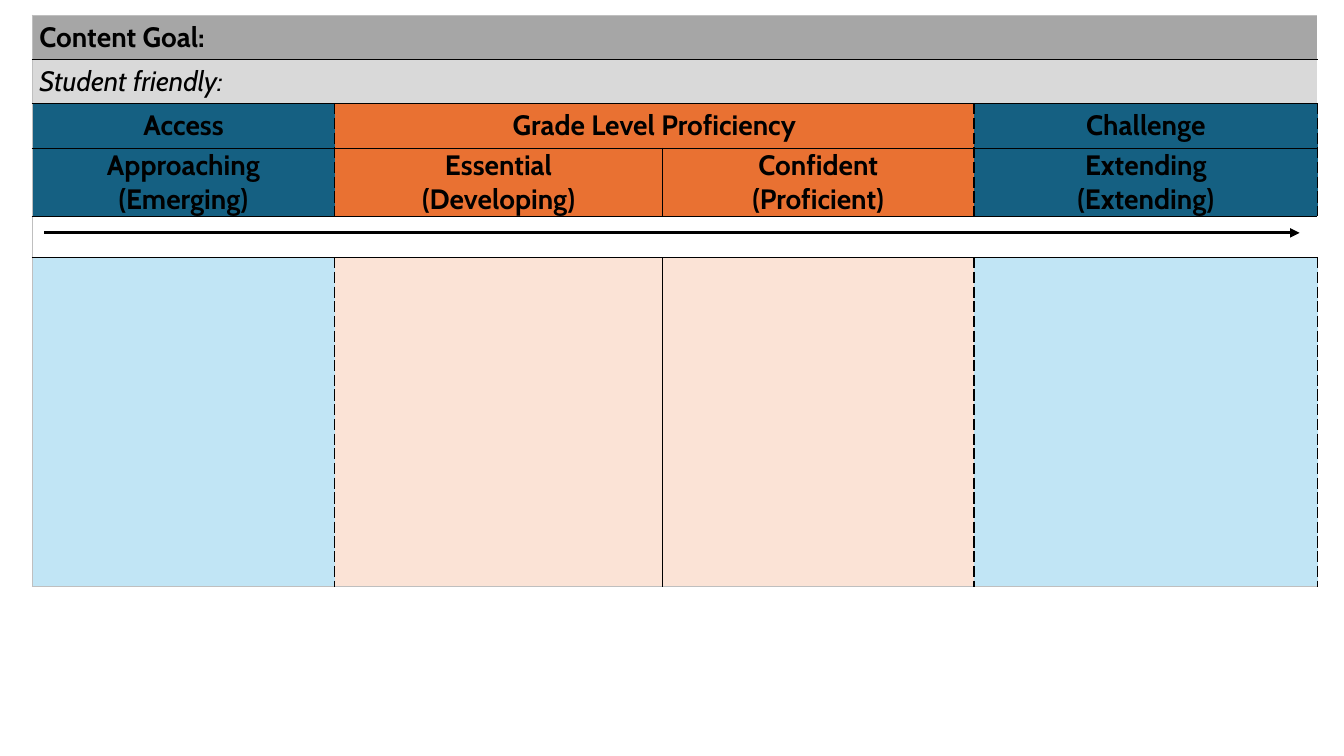
"""Build a content goal planner with four proficiency levels."""
import pptx
import pptx.dml.color
import pptx.enum.shapes
import pptx.enum.text
import pptx.oxml
import pptx.util
from lxml import etree

Inches = pptx.util.Inches
Pt = pptx.util.Pt
Align = pptx.enum.text.PP_ALIGN
NS = 'xmlns:a="http://schemas.openxmlformats.org/drawingml/2006/main"'

GRAY, PALE = "A6A6A6", "D9D9D9"
BLUE, ORANGE = "156082", "E97132"
SKY, PEACH = "C1E5F5", "FBE3D6"
COLS = [3, 3.25, 3.09, 3.41]
ROWS = [0.44, 0.44, 0.44, 0.67, 0.41, 3.26]
EDGES = ["rim", "dash", "solid", "dash", "dash"]
LINES = {"rim": ("BFBFBF", "solid"), "dash": ("000000", "sysDash"),
         "solid": ("000000", "solid")}
CENTER = {"bold": True, "align": Align.CENTER}
CELLS = [
    [("Content Goal:", GRAY, 4, {"bold": True})],
    [("Student friendly:", PALE, 4, {"italic": True})],
    [("Access", BLUE, 1, CENTER),
     ("Grade Level Proficiency", ORANGE, 2, CENTER),
     ("Challenge", BLUE, 1, CENTER)],
    [("Approaching\n(Emerging)", BLUE, 1, CENTER),
     ("Essential\n(Developing)", ORANGE, 1, CENTER),
     ("Confident\n(Proficient)", ORANGE, 1, CENTER),
     ("Extending\n(Extending)", BLUE, 1, CENTER)],
    [("", None, 4, {})],
    [("", fill, 1, {}) for fill in (SKY, PEACH, PEACH, SKY)],
]


def color(code):
    return pptx.dml.color.RGBColor.from_string(code)


def write(frame, text, font="Cabin", size=20, ink="000000",
          bold=False, italic=False, align=Align.LEFT):
    frame.text = text
    for para in frame.paragraphs:
        para.alignment = align
        para.font.name = font
        para.font.size = Pt(size)
        para.font.bold = bold
        para.font.italic = italic
        para.font.color.rgb = color(ink)


class Board:
    def __init__(self, slide):
        self.slide = slide
        self.ink = "000000"

    def border(self, cell, sides):
        props = cell._tc.get_or_add_tcPr()
        for spot, (side, kind) in enumerate(sides):
            ink, dash = LINES[kind]
            props.insert(spot, pptx.oxml.parse_xml(
                f'<a:ln{side} {NS} w="12700"><a:solidFill><a:srgbClr val="{ink}"/>'
                f'</a:solidFill><a:prstDash val="{dash}"/></a:ln{side}>'))

    def paint(self, cell, fill):
        cell.margin_left = cell.margin_right = Inches(0.07)
        cell.margin_top = cell.margin_bottom = 0
        cell.vertical_anchor = pptx.enum.text.MSO_ANCHOR.MIDDLE
        if fill:
            cell.fill.solid()
            cell.fill.fore_color.rgb = color(fill)
        else:
            cell.fill.background()

    def table(self, left, top, cols, rows, cells):
        grid = self.slide.shapes.add_table(
            len(rows), len(cols), Inches(left), Inches(top),
            Inches(sum(cols)), Inches(sum(rows))).table
        grid.first_row = grid.horz_banding = False
        for col, width in zip(grid.columns, cols):
            col.width = Inches(width)
        for row, height in zip(grid.rows, rows):
            row.height = Inches(height)
        for r, items in enumerate(cells):
            start = 0
            for text, fill, span, style in items:
                end = start + span
                head = grid.cell(r, start)
                if span > 1:
                    head.merge(grid.cell(r, end - 1))
                for c in range(start, end):
                    cell = grid.cell(r, c)
                    self.paint(cell, fill)
                    sides = []
                    if c == start:
                        sides.append(("L", EDGES[c]))
                    if c == end - 1:
                        sides.append(("R", "rim" if span == 4 else EDGES[end]))
                    sides.append(("T", "solid" if r else "rim"))
                    sides.append(("B", "solid" if r < len(rows) - 1 else "rim"))
                    self.border(cell, sides)
                write(head.text_frame, text, ink=self.ink, **style)
                start = end

    def arrow(self, left, right, top, width):
        line = self.slide.shapes.add_connector(
            pptx.enum.shapes.MSO_CONNECTOR.STRAIGHT,
            Inches(left), Inches(top), Inches(right), Inches(top))
        line.line.color.rgb = color(self.ink)
        line.line.width = Pt(width)
        line.line._get_or_add_ln().append(
            pptx.oxml.parse_xml(f'<a:tailEnd {NS} type="triangle"/>'))
        etree.SubElement(line._element.spPr, pptx.oxml.ns.qn("a:effectLst"))


def main():
    deck = pptx.Presentation()
    deck.slide_width, deck.slide_height = Inches(13.33), Inches(7.5)
    board = Board(deck.slides.add_slide(deck.slide_layouts[6]))
    board.table(0.32, 0.15, COLS, ROWS, CELLS)
    board.arrow(0.44, 12.89, 2.31, 2.25)
    deck.save("out.pptx")


if __name__ == "__main__":
    main()
